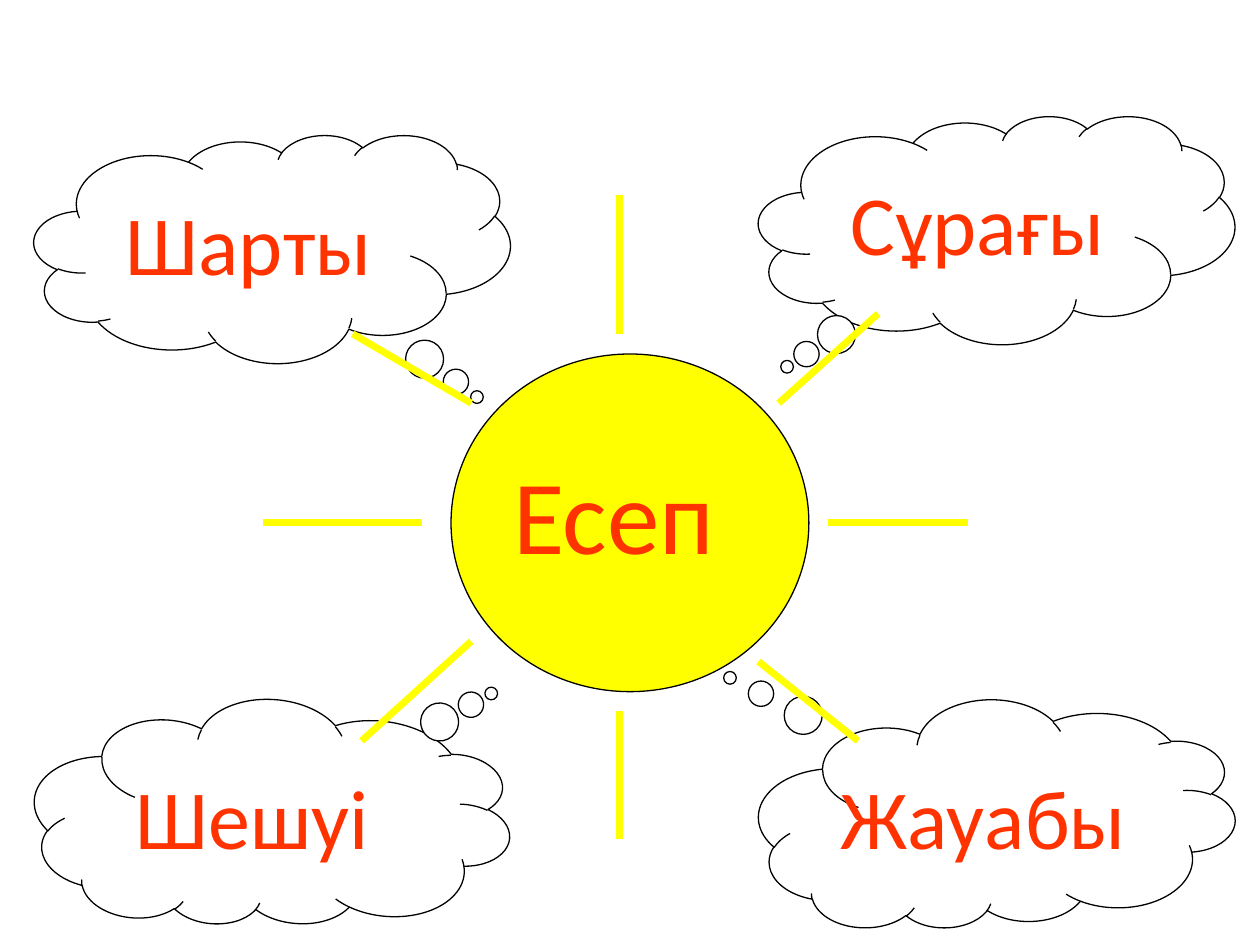
from lxml import etree
from pptx import Presentation
from pptx import util as u
from pptx.dml.color import RGBColor
from pptx.enum import shapes, text
from pptx.oxml.ns import qn

COLORS = {"sun": "FFFF00", "cloud": "FFFFFF", "outline": "000000", "label": "FF3300"}

presentation = Presentation()
presentation.slide_width = u.Inches(10)
presentation.slide_height = u.Inches(7.5)
slide = presentation.slides.add_slide(presentation.slide_layouts[6])


def add_outlined(kind, left, top, width, height, fill):
    shape = slide.shapes.add_shape(
        kind, u.Inches(left), u.Inches(top), u.Inches(width), u.Inches(height))
    shape.shadow.inherit = False
    shape.fill.solid()
    shape.fill.fore_color.rgb = RGBColor.from_string(COLORS[fill])
    shape.line.color.rgb = RGBColor.from_string(COLORS["outline"])
    shape.line.width = u.Pt(0.75)
    return shape


def add_label(wording, left, top, width, height, size):
    box = slide.shapes.add_textbox(
        u.Inches(left), u.Inches(top), u.Inches(width), u.Inches(height))
    frame = box.text_frame
    frame.word_wrap = True
    frame.auto_size = text.MSO_AUTO_SIZE.SHAPE_TO_FIT_TEXT
    run = frame.paragraphs[0].add_run()
    run.text = wording
    run.font.name = "Calibri"
    run.font.size = u.Pt(size)
    run.font.color.rgb = RGBColor.from_string(COLORS["label"])


# Sun
add_outlined(shapes.MSO_SHAPE.OVAL, 3.58, 2.81, 2.84, 2.68, "sun")
add_label("Есеп", 3.98, 3.52, 2.2, 1.11, 60)

# Clouds: left, top, rotation, tail position
clouds = [
    (6.02, 0.92, 0, (-0.44, 0.6)),
    (6.02, 5.56, 180, (0.56, 0.6)),
    (0.27, 5.56, 184.2, (-0.44, 0.6)),
    (0.27, 1.07, 0, (0.43, 0.65)),
]
for left, top, rotation, tail in clouds:
    cloud = add_outlined(shapes.MSO_SHAPE.CLOUD_CALLOUT, left, top, 3.78, 1.81, "cloud")
    cloud.rotation = rotation
    cloud.adjustments[0], cloud.adjustments[1] = tail

# Rays: start x, start y, end x, end y
rays = [
    (3.35, 4.15, 2.09, 4.15),
    (4.92, 2.65, 4.92, 1.55),
    (3.74, 5.09, 2.87, 5.88),
    (6.18, 3.2, 6.97, 2.49),
    (3.74, 3.2, 2.8, 2.65),
    (6.57, 4.15, 7.68, 4.15),
    (4.92, 5.64, 4.92, 6.66),
    (6.02, 5.25, 6.81, 5.88),
]
for ray in rays:
    connector = slide.shapes.add_connector(
        shapes.MSO_CONNECTOR.STRAIGHT, *[u.Inches(value) for value in ray])
    connector.line.color.rgb = RGBColor.from_string(COLORS["sun"])
    connector.line.width = u.Pt(4)
    etree.SubElement(connector.element.spPr, qn("a:effectLst"))

# Cloud labels: wording, left, top, width
labels = [
    ("Шарты", 0.9, 1.47, 2.52),
    ("Сұрағы", 6.65, 1.31, 2.6),
    ("Шешуі", 0.98, 6.03, 2.6),
    ("Жауабы", 6.57, 6.03, 2.76),
]
for wording, left, top, width in labels:
    add_label(wording, left, top, width, 0.91, 48)

presentation.save("out.pptx")
